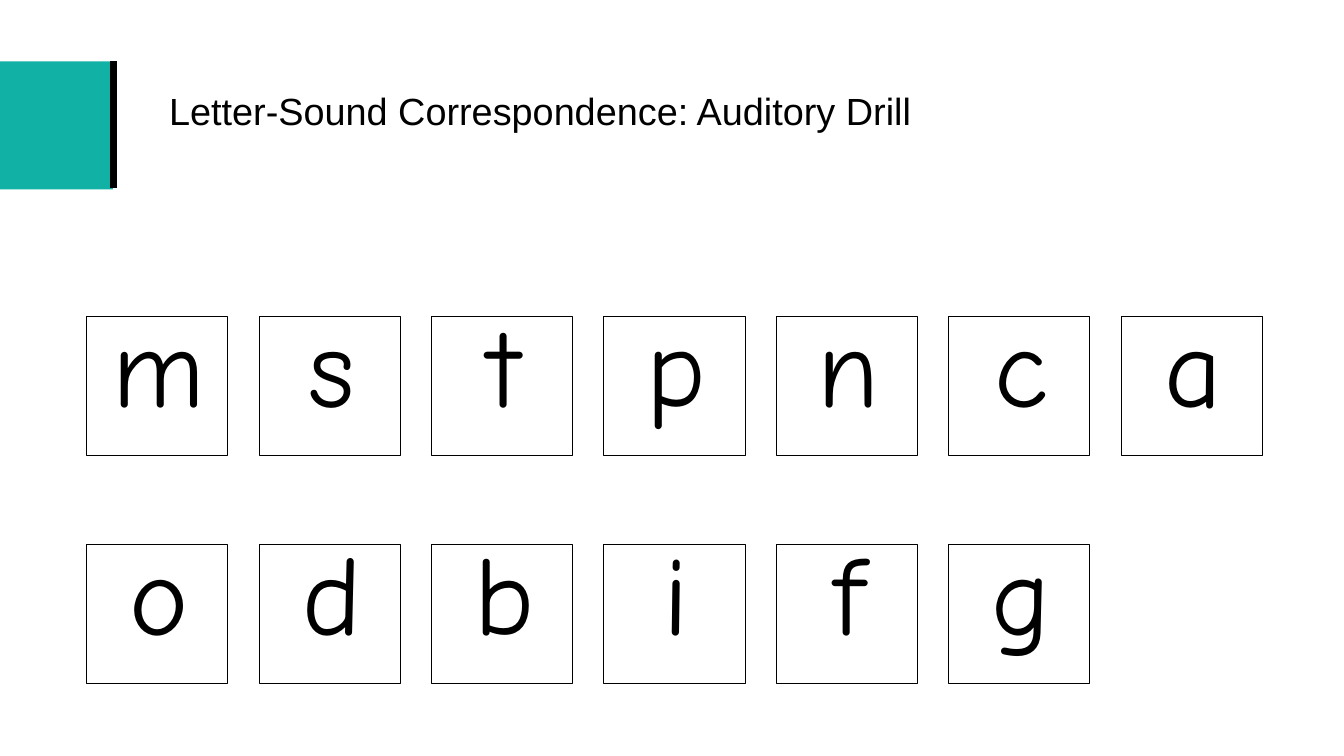
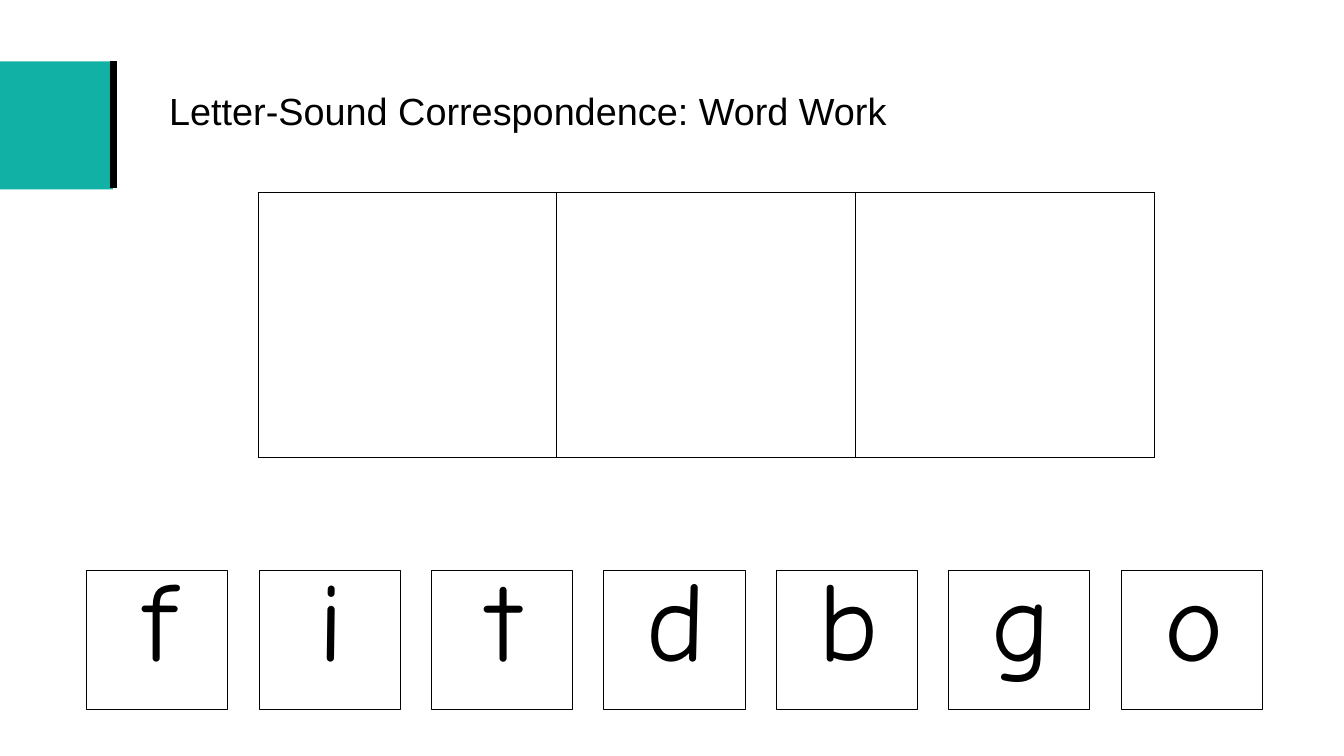
from lxml import etree
from pptx import Presentation
from pptx import util as u
from pptx.dml.color import RGBColor
from pptx.enum import shapes, text
from pptx.oxml import ns

TEAL = "11B2A5"
BLACK = "000000"


def rgb(code):
    return RGBColor.from_string(code)


class LessonDeck:
    """Holds the shared style and the slide being built."""

    TITLE_FONT = "Arial"
    LETTER_FONT = "Comic Neue"
    CARD_LEFT, CARD_PITCH = 0.86, 1.71
    CARD_WIDTH, CARD_HEIGHT = 1.4, 1.38

    def __init__(self):
        self.deck = Presentation()
        self.deck.slide_width = u.Inches(13.33)
        self.deck.slide_height = u.Inches(7.5)
        self.page = None

    def add_page(self, title):
        self.page = self.deck.slides.add_slide(self.deck.slide_layouts[6])
        band = self.add_rectangle(0, 0.61, 1.12, 1.27)
        band.fill.solid()
        band.fill.fore_color.rgb = rgb(TEAL)
        band.line.fill.background()
        self.add_line(1.13, 0.61, 1.13, 1.87, 5)
        self.add_title(title)

    def add_rectangle(self, left, top, width, height):
        box = self.page.shapes.add_shape(
            shapes.MSO_SHAPE.RECTANGLE,
            u.Inches(left), u.Inches(top), u.Inches(width), u.Inches(height))
        box.shadow.inherit = False
        return box

    def add_line(self, start_x, start_y, end_x, end_y, weight):
        line = self.page.shapes.add_connector(
            shapes.MSO_CONNECTOR.STRAIGHT,
            u.Inches(start_x), u.Inches(start_y), u.Inches(end_x), u.Inches(end_y))
        line.line.color.rgb = rgb(BLACK)
        line.line.width = u.Pt(weight)
        etree.SubElement(line._element.spPr, ns.qn("a:effectLst"))

    def add_span(self, para, words, font, size):
        span = para.add_run()
        span.text = words
        span.font.name = font
        span.font.size = u.Pt(size)
        span.font.color.rgb = rgb(BLACK)

    def add_title(self, words):
        box = self.page.shapes.add_textbox(
            u.Inches(1.58), u.Inches(0.4), u.Inches(10.83), u.Inches(1.45))
        frame = box.text_frame
        frame.word_wrap = True
        frame.vertical_anchor = text.MSO_ANCHOR.MIDDLE
        para = frame.paragraphs[0]
        para.line_spacing = 0.9
        self.add_span(para, words, self.TITLE_FONT, 27)

    def add_card(self, letter, left, top):
        card = self.add_rectangle(left, top, self.CARD_WIDTH, self.CARD_HEIGHT)
        card.fill.background()
        card.line.color.rgb = rgb(BLACK)
        card.line.width = u.Pt(0.75)
        frame = card.text_frame
        frame.word_wrap = True
        frame.vertical_anchor = text.MSO_ANCHOR.TOP
        para = frame.paragraphs[0]
        para.alignment = text.PP_ALIGN.CENTER
        para.line_spacing = 0.8
        para.space_before = u.Pt(10)
        para._p.get_or_add_pPr().set("marL", str(u.Inches(0.04)))
        self.add_span(para, letter, self.LETTER_FONT, 80)

    def add_card_row(self, letters, top):
        for index, letter in enumerate(letters):
            self.add_card(letter, self.CARD_LEFT + index * self.CARD_PITCH, top)

    def add_sound_boxes(self, left, top, width, height, count):
        table = self.page.shapes.add_table(
            1, count, u.Inches(left), u.Inches(top),
            u.Inches(width), u.Inches(height)).table
        table.first_row = False
        table.horz_banding = False
        for cell in table.iter_cells():
            cell.fill.background()
            self.add_cell_borders(cell, 1)

    def add_cell_borders(self, cell, weight):
        properties = cell._tc.get_or_add_tcPr()
        for index, side in enumerate(("lnL", "lnR", "lnT", "lnB")):
            border = etree.Element(ns.qn("a:" + side), w=str(u.Pt(weight)))
            fill = etree.SubElement(border, ns.qn("a:solidFill"))
            etree.SubElement(fill, ns.qn("a:srgbClr"), val=BLACK)
            properties.insert(index, border)


def main():
    lesson = LessonDeck()

    lesson.add_page("Letter-Sound Correspondence: Auditory Drill")
    lesson.add_card_row("mstpnca", 3.14)
    lesson.add_card_row("odbifg", 5.4)

    lesson.add_page("Letter-Sound Correspondence: Word Work")
    lesson.add_sound_boxes(2.56, 1.91, 8.89, 2.63, 3)
    lesson.add_card_row("fitdbgo", 5.66)

    lesson.deck.save("out.pptx")


if __name__ == "__main__":
    main()
